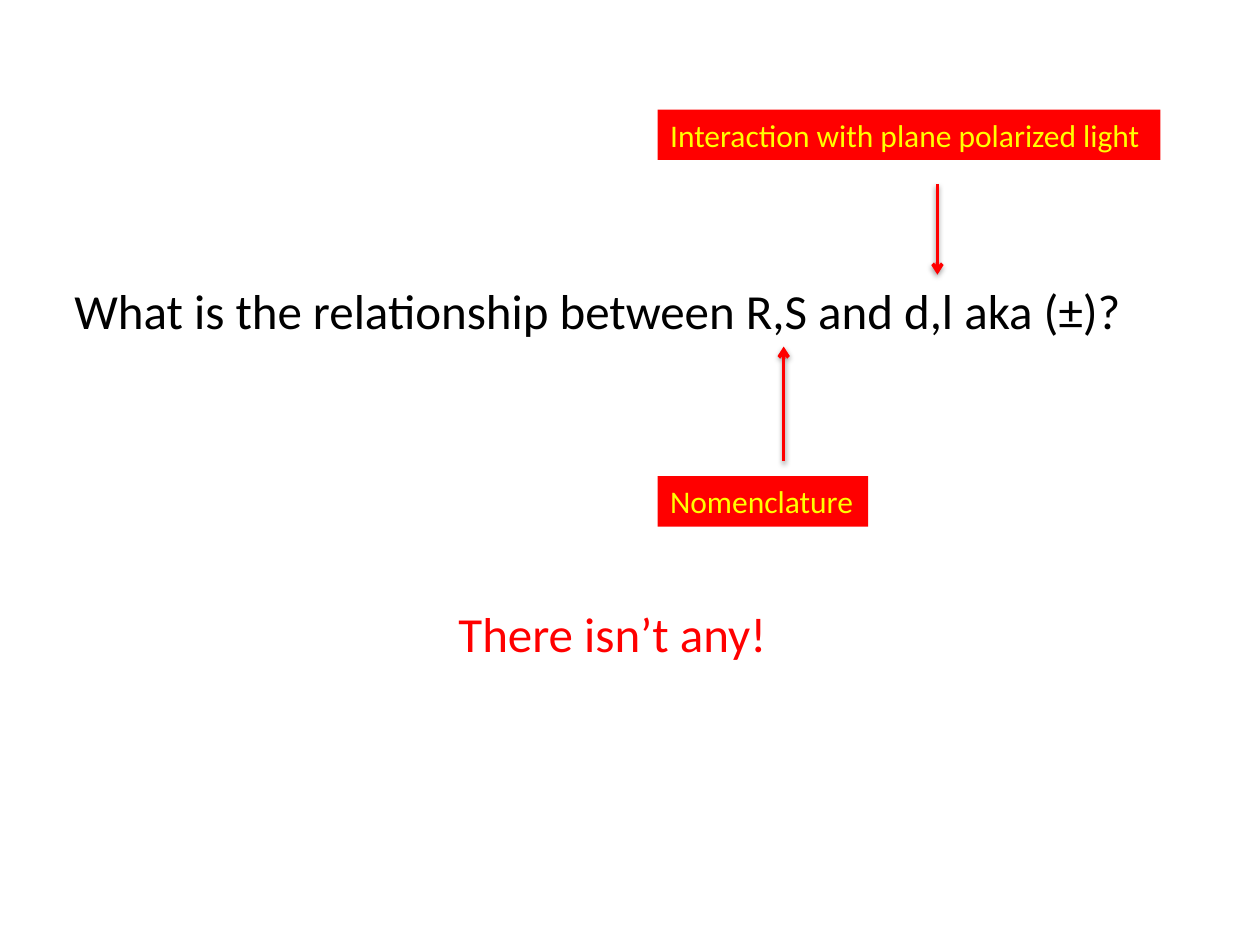
from pptx import Presentation
from pptx.dml.color import RGBColor
from pptx.enum.shapes import MSO_CONNECTOR
from pptx.enum.text import MSO_ANCHOR, MSO_AUTO_SIZE, PP_ALIGN
from pptx.oxml import parse_xml
from pptx.oxml.ns import nsdecls
from pptx.util import Inches, Pt

BLACK = RGBColor(0x00, 0x00, 0x00)
RED = RGBColor(0xFF, 0x00, 0x00)
YELLOW = RGBColor(0xFF, 0xFF, 0x00)

ARROWHEAD = f'<a:tailEnd {nsdecls("a")} type="arrow"/>'
SOFT_SHADOW = (
    f'<a:effectLst {nsdecls("a")}>'
    f'<a:outerShdw blurRad="{Pt(3.1)}" dist="{Pt(1.6)}" dir="5400000" rotWithShape="0">'
    '<a:srgbClr val="000000"><a:alpha val="38000"/></a:srgbClr>'
    '</a:outerShdw></a:effectLst>'
)


class SlideBuilder:
    font = "Calibri"
    large, small = Pt(28), Pt(18)
    label_left, label_height = 5.22, 0.4

    def __init__(self, page):
        self.page = page

    def set_text(self, box, text, size, color):
        frame = box.text_frame
        frame.text = text
        frame.word_wrap = False
        frame.auto_size = MSO_AUTO_SIZE.SHAPE_TO_FIT_TEXT
        frame.vertical_anchor = MSO_ANCHOR.TOP
        para = frame.paragraphs[0]
        para.alignment = PP_ALIGN.LEFT
        font = para.runs[0].font
        font.name, font.size, font.color.rgb = self.font, size, color

    def title(self, text, left, top, width, height):
        box = self.page.shapes.title
        box.left, box.top = Inches(left), Inches(top)
        box.width, box.height = Inches(width), Inches(height)
        self.set_text(box, text, self.large, BLACK)

    def answer(self, text, left, top, width, height):
        box = self.page.shapes.add_textbox(
            Inches(left), Inches(top), Inches(width), Inches(height))
        self.set_text(box, text, self.large, RED)

    def callout(self, text, top, width, arrow_x, arrow_start, arrow_end):
        """Group a filled label with the vertical arrow that points at the title."""
        shapes = self.page.shapes.add_group_shape().shapes
        label = shapes.add_textbox(
            Inches(self.label_left), Inches(top), Inches(width), Inches(self.label_height))
        label.fill.solid()
        label.fill.fore_color.rgb = RED
        self.set_text(label, text, self.small, YELLOW)
        self.arrow(shapes, arrow_x, arrow_start, arrow_end)

    def arrow(self, shapes, x, start, end):
        arrow = shapes.add_connector(
            MSO_CONNECTOR.STRAIGHT, Inches(x), Inches(start), Inches(x), Inches(end))
        arrow.line.color.rgb = RED
        arrow.line.width = Pt(2)
        properties = arrow._element.spPr
        properties.ln.append(parse_xml(ARROWHEAD))
        properties.append(parse_xml(SOFT_SHADOW))


def main():
    deck = Presentation()
    deck.slide_width, deck.slide_height = Inches(10), Inches(7.5)
    title_only = deck.slide_layouts[5]
    builder = SlideBuilder(deck.slides.add_slide(title_only))

    builder.title("What is the relationship between R,S and d,l aka (±)?",
                  0.49, 2.18, 8.72, 0.57)
    builder.answer("There isn’t any!", 3.54, 4.74, 2.68, 0.57)
    builder.callout("Interaction with plane polarized light", top=0.87, width=3.99,
                    arrow_x=7.44, arrow_start=1.46, arrow_end=2.18)
    builder.callout("Nomenclature", top=3.78, width=1.67,
                    arrow_x=6.22, arrow_start=3.66, arrow_end=2.75)
    deck.save("out.pptx")


if __name__ == "__main__":
    main()
